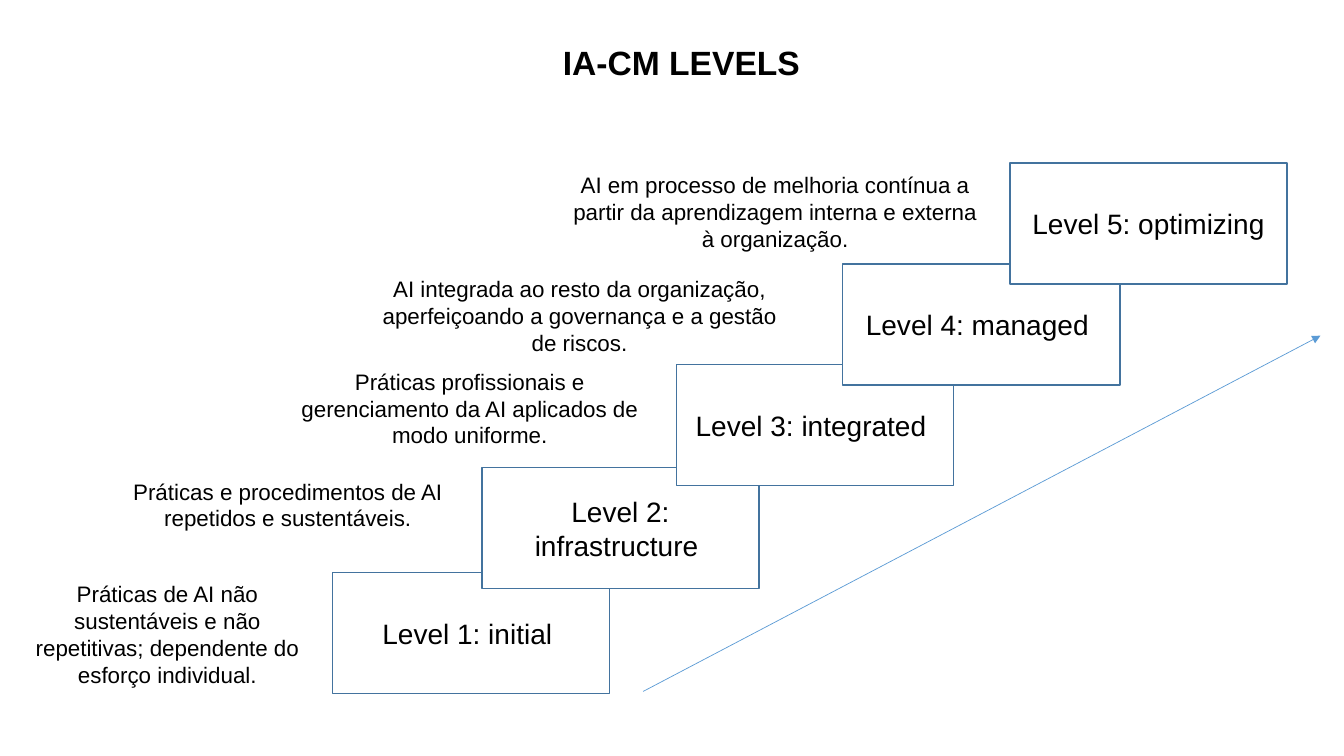
from lxml import etree
from pptx import Presentation
from pptx.dml.color import RGBColor
from pptx.enum.shapes import MSO_CONNECTOR as Connector, MSO_SHAPE as Preset
from pptx.enum.text import MSO_ANCHOR as Anchor, MSO_AUTO_SIZE as AutoSize, PP_ALIGN as Align
from pptx.oxml.ns import qn
from pptx.util import Pt

SLIDE_SIZE = (960, 540)
BOX_SIZE = (198, 86.4)
TITLE = ("IA-CM LEVELS", (200.2, 26.6, 573.1, 36))
ARROW = (459.4, 493.9, 943.2, 239.8)

LEVELS = [
    ("Level 1: initial ", (237.6, 409),
     "Práticas de AI não sustentáveis e não repetitivas; dependente do esforço individual.",
     (13, 411.1, 213.1, 85)),
    ("Level 2: infrastructure ", (344.2, 334.1),
     "Práticas e procedimentos de AI repetidos e sustentáveis.",
     (74.9, 337.7, 261.4, 46.1)),
    ("Level 3: integrated ", (483.1, 260.6),
     "Práticas profissionais e gerenciamento da AI aplicados de modo uniforme.",
     (200.2, 259.2, 270.7, 65.5)),
    ("Level 4: managed ", (601.9, 188.6),
     "AI integrada ao resto da organização, aperfeiçoando a governança e a gestão de riscos.",
     (257, 193, 313.9, 65.5)),
    ("Level 5: optimizing", (721.4, 116.6),
     "AI em processo de melhoria contínua a partir da aprendizagem interna e externa à organização.",
     (396.7, 118.8, 313.9, 65.5)),
]

LEVEL_FONT = {"name": "Arial", "size": Pt(20), "bold": False}
NOTE_FONT = {"name": "Arial", "size": Pt(16), "bold": False}
TITLE_FONT = {"name": "Arial", "size": Pt(24), "bold": True}
BOX_FRAME = {"word_wrap": True, "vertical_anchor": Anchor.MIDDLE}
TEXT_FRAME = {"word_wrap": True, "auto_size": AutoSize.SHAPE_TO_FIT_TEXT}


def color(hex_value):
    return RGBColor.from_string(hex_value)


def points(values):
    return [Pt(value) for value in values]


def apply(target, formats):
    for name, value in formats.items():
        setattr(target, name, value)


def write(shape, text, frame_formats, font_formats):
    apply(shape.text_frame, frame_formats)
    paragraph = shape.text_frame.paragraphs[0]
    paragraph.alignment = Align.CENTER
    run = paragraph.add_run()
    run.text = text
    apply(run.font, font_formats)
    run.font.color.rgb = color("000000")


def add_level(slide, text, corner):
    shape = slide.shapes.add_shape(Preset.RECTANGLE, *points(corner + BOX_SIZE))
    shape.shadow.inherit = False
    shape.fill.solid()
    shape.fill.fore_color.rgb = color("FFFFFF")
    shape.line.color.rgb = color("43739E")
    shape.line.width = Pt(1)
    write(shape, text, BOX_FRAME, LEVEL_FONT)


def add_text(slide, text, place, font_formats):
    shape = slide.shapes.add_textbox(*points(place))
    write(shape, text, TEXT_FRAME, font_formats)


def add_arrow(slide, ends):
    arrow = slide.shapes.add_connector(Connector.STRAIGHT, *points(ends))
    arrow.line.color.rgb = color("5B9BD5")
    arrow.line.width = Pt(0.5)
    properties = arrow.element.spPr
    etree.SubElement(properties.find(qn("a:ln")), qn("a:tailEnd"), type="triangle")
    etree.SubElement(properties, qn("a:effectLst"))


def main():
    presentation = Presentation()
    presentation.slide_width, presentation.slide_height = points(SLIDE_SIZE)
    slide = presentation.slides.add_slide(presentation.slide_layouts[6])
    for name, corner, _, _ in LEVELS:
        add_level(slide, name, corner)
    add_arrow(slide, ARROW)
    for _, _, note, place in LEVELS:
        add_text(slide, note, place, NOTE_FONT)
    add_text(slide, *TITLE, TITLE_FONT)
    presentation.save("out.pptx")


if __name__ == "__main__":
    main()
